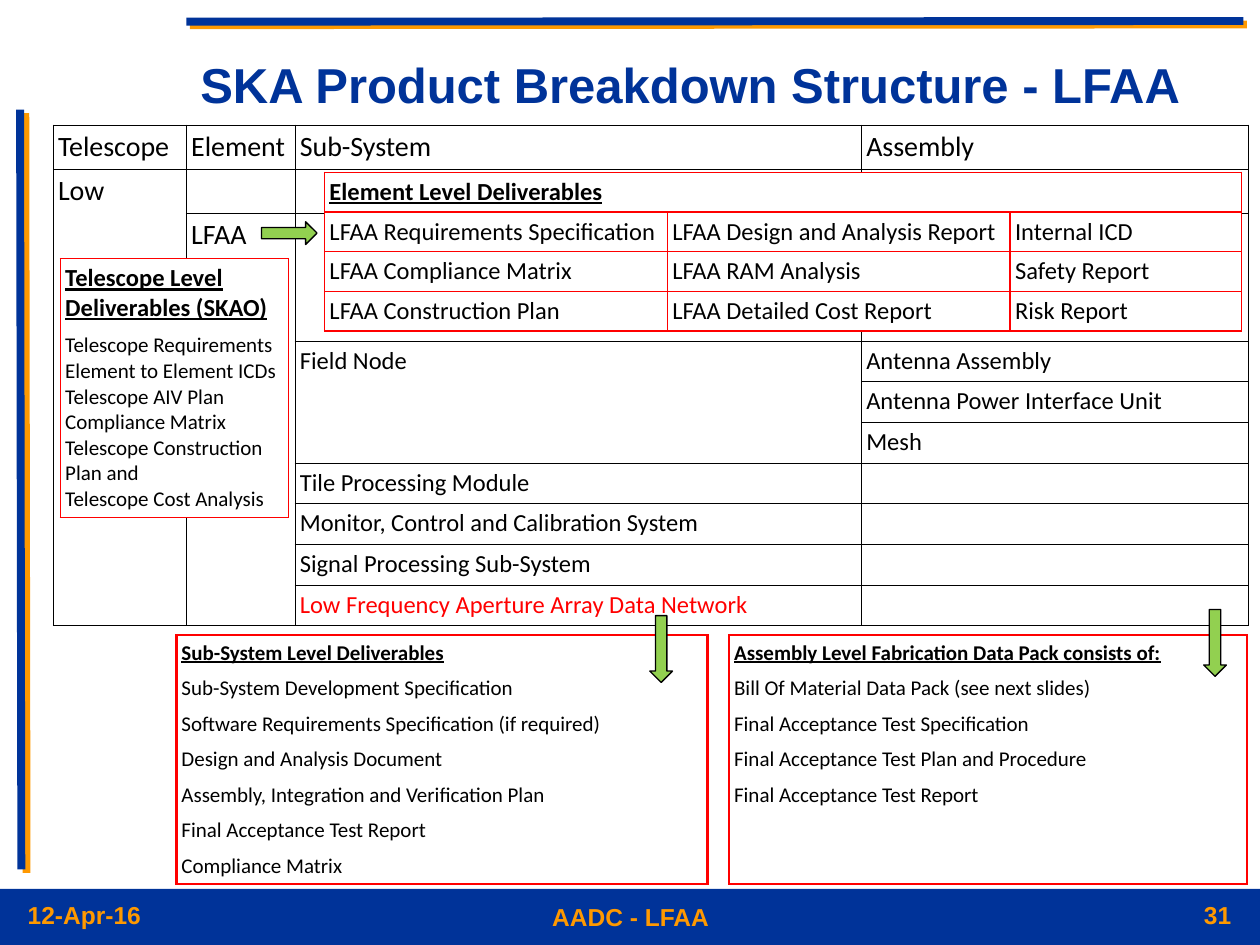
"""Build the SKA Product Breakdown Structure slide for LFAA."""
from lxml.etree import SubElement
from pptx import Presentation
from pptx.dml.color import RGBColor
from pptx.enum.shapes import MSO_CONNECTOR, MSO_SHAPE
from pptx.enum.text import MSO_ANCHOR, MSO_AUTO_SIZE, PP_ALIGN
from pptx.oxml.ns import qn
from pptx.util import Pt

NAVY = RGBColor(0x00, 0x33, 0x99)
ORANGE = RGBColor(0xFF, 0x99, 0x00)
RED = RGBColor(0xFF, 0x00, 0x00)
GREEN = RGBColor(0x92, 0xD0, 0x50)
BLACK = RGBColor(0x00, 0x00, 0x00)
WHITE = RGBColor(0xFF, 0xFF, 0xFF)
NO_STYLE = "{2D5ABB26-0587-4C30-8999-92F81FD0307C}"


def write_text(tf, text, size=14, font="Calibri", color=BLACK, bold=False,
               underline=False, align=PP_ALIGN.LEFT):
    for i, line in enumerate(text.split("\n")):
        p = tf.paragraphs[0] if i == 0 else tf.add_paragraph()
        p.alignment = align
        if not line:
            SubElement(p._p, qn("a:endParaRPr"), sz=str(size * 100))
            continue
        r = p.add_run()
        r.text = line
        r.font.size, r.font.name = Pt(size), font
        r.font.bold, r.font.underline = bold, underline
        r.font.color.rgb = color


def add_grid(left, top, widths, heights, rows, line, weight, sizes,
             inner=True, heading=True, fill=None, merges=()):
    frame = slide.shapes.add_table(len(heights), len(widths), Pt(left), Pt(top),
                                   Pt(sum(widths)), Pt(sum(heights)))
    table = frame.table
    table.first_row = table.horz_banding = False
    table._tbl.tblPr.find(qn("a:tableStyleId")).text = NO_STYLE
    for col, width in zip(table.columns, widths):
        col.width = Pt(width)
    for row, height in zip(table.rows, heights):
        row.height = Pt(height)
    for r1, c1, r2, c2 in merges:
        table.cell(r1, c1).merge(table.cell(r2, c2))
    for i, (row, size) in enumerate(zip(rows, sizes)):
        sides = ["lnL", "lnR"]
        if inner or i == 0:
            sides.append("lnT")
        if inner or i == len(rows) - 1:
            sides.append("lnB")
        for j, text in enumerate(row):
            cell = table.cell(i, j)
            cell.margin_left = cell.margin_right = Pt(2.8)
            cell.margin_top = cell.margin_bottom = Pt(2.8)
            title = heading and i == 0
            write_text(cell.text_frame, text, size=size, bold=title, underline=title)
            for side in sides:
                ln = SubElement(cell._tc.tcPr, qn(f"a:{side}"), w=str(Pt(weight)))
                SubElement(SubElement(ln, qn("a:solidFill")), qn("a:srgbClr"), val=str(line))
            if fill is None:
                cell.fill.background()
            else:
                cell.fill.solid()
                cell.fill.fore_color.rgb = fill
    return table


prs = Presentation()
prs.slide_width, prs.slide_height = Pt(720), Pt(540)
slide = prs.slides.add_slide(prs.slide_layouts[5])

title = slide.shapes.title
title.left, title.top, title.width, title.height = Pt(107.3), Pt(16), Pt(606), Pt(63.4)
title.text_frame.auto_size = MSO_AUTO_SIZE.NONE
title.text_frame.vertical_anchor = MSO_ANCHOR.MIDDLE
write_text(title.text_frame, "SKA Product Breakdown Structure - LFAA",
           size=28, font="Arial", color=NAVY, bold=True)

band = slide.shapes.add_shape(MSO_SHAPE.RECTANGLE, 0, Pt(508), Pt(720), Pt(32))
band.shadow.inherit = False
band.fill.solid()
band.fill.fore_color.rgb = NAVY
band.line.fill.background()

for x1, y1, x2, y2, dist, angle in [
    (11.5, 62.6, 12.2, 496.8, 3.6, 34),
    (710.5, 12, 106.5, 12.4, 2.8, 45),
]:
    rule = slide.shapes.add_connector(MSO_CONNECTOR.STRAIGHT, Pt(x1), Pt(y1), Pt(x2), Pt(y2))
    rule.line.color.rgb = NAVY
    rule.line.width = Pt(4.5)
    effects = SubElement(rule._element.spPr, qn("a:effectLst"))
    shadow = SubElement(effects, qn("a:outerShdw"), dist=str(Pt(dist)),
                        dir=str(angle * 60000), algn="ctr", rotWithShape="0")
    SubElement(shadow, qn("a:srgbClr"), val=str(ORANGE))

for text, left, top, width, align in [
    ("AADC - LFAA", 218.9, 512, 283, PP_ALIGN.CENTER),
    ("12-Apr-16", 8.8, 511, 125.3, PP_ALIGN.LEFT),
    ("31", 585.4, 511, 125.3, PP_ALIGN.RIGHT),
]:
    tf = slide.shapes.add_textbox(Pt(left), Pt(top), Pt(width), Pt(26)).text_frame
    tf.word_wrap = True
    write_text(tf, text, size=14, font="Arial", color=ORANGE, bold=True, align=align)

breakdown_rows = [
    ["Telescope", "Element", "Sub-System", "Assembly"],
    ["Low", "", "", ""],
    ["", "LFAA", "", ""],
    ["", "", "Field Node", "Antenna Assembly"],
    ["", "", "", "Antenna Power Interface Unit"],
    ["", "", "", "Mesh"],
    ["", "", "Tile Processing Module", ""],
    ["", "", "Monitor, Control and Calibration System", ""],
    ["", "", "Signal Processing Sub-System", ""],
    ["", "", "Low Frequency Aperture Array Data Network", ""],
]
breakdown = add_grid(30.4, 71.5, [76.1, 62.1, 323.7, 221.1],
                     [25.1, 25.1, 73.2] + [23.27] * 7, breakdown_rows, BLACK, 0.5,
                     [16] * 3 + [14] * 7, heading=False,
                     merges=[(1, 0, 9, 0), (2, 1, 9, 1), (3, 2, 5, 2)])
network = breakdown.cell(9, 2).text_frame.paragraphs[0].runs[0]
network.font.color.rgb = RED

sub_system = [
    "Sub-System Level Deliverables",
    "Sub-System Development Specification",
    "Software Requirements Specification (if required)",
    "Design and Analysis Document",
    "Assembly, Integration and Verification Plan",
    "Final Acceptance Test Report",
    "Compliance Matrix",
]
assembly = [
    "Assembly Level Fabrication Data Pack consists of:",
    "Bill Of Material Data Pack (see next slides)",
    "Final Acceptance Test Specification",
    "Final Acceptance Test Plan and Procedure",
    "Final Acceptance Test Report",
    "",
    "",
]
for left, width, items in [(100.9, 303.4, sub_system), (416.7, 296, assembly)]:
    add_grid(left, 363, [width], [20.33] * 7, [[item] for item in items],
             RED, 1.5, [12] * 7, inner=False)

element_rows = [
    ["Element Level Deliverables", "", ""],
    ["LFAA Requirements Specification", "LFAA Design and Analysis Report", "Internal ICD"],
    ["LFAA Compliance Matrix", "LFAA RAM Analysis", "Safety Report"],
    ["LFAA Construction Plan", "LFAA Detailed Cost Report", "Risk Report"],
]
add_grid(185.5, 98.5, [195.9, 195.9, 132.3], [22.7] * 4, element_rows, RED, 1,
         [14] * 4, fill=WHITE, merges=[(0, 0, 0, 2)])

for left, top, width, turn in [
    (149.5, 126.7, 31.7, 0), (675.2, 360.9, 38.2, 90), (358.7, 364.4, 38.2, 90),
]:
    arrow = slide.shapes.add_shape(MSO_SHAPE.RIGHT_ARROW, Pt(left), Pt(top), Pt(width), Pt(13))
    arrow.rotation = turn
    arrow.shadow.inherit = False
    arrow.fill.solid()
    arrow.fill.fore_color.rgb = GREEN
    arrow.line.color.rgb = BLACK
    arrow.line.width = Pt(0.75)

telescope_items = "\n".join([
    "Telescope Requirements", "Element to Element ICDs", "Telescope AIV Plan",
    "Compliance Matrix", "Telescope Construction Plan and", "Telescope Cost Analysis",
])
add_grid(34.5, 147.7, [130.3], [39.8, 108.2],
         [["Telescope Level Deliverables (SKAO)"], [telescope_items]],
         RED, 1, [14, 12], inner=False, fill=WHITE)

prs.save("out.pptx")
